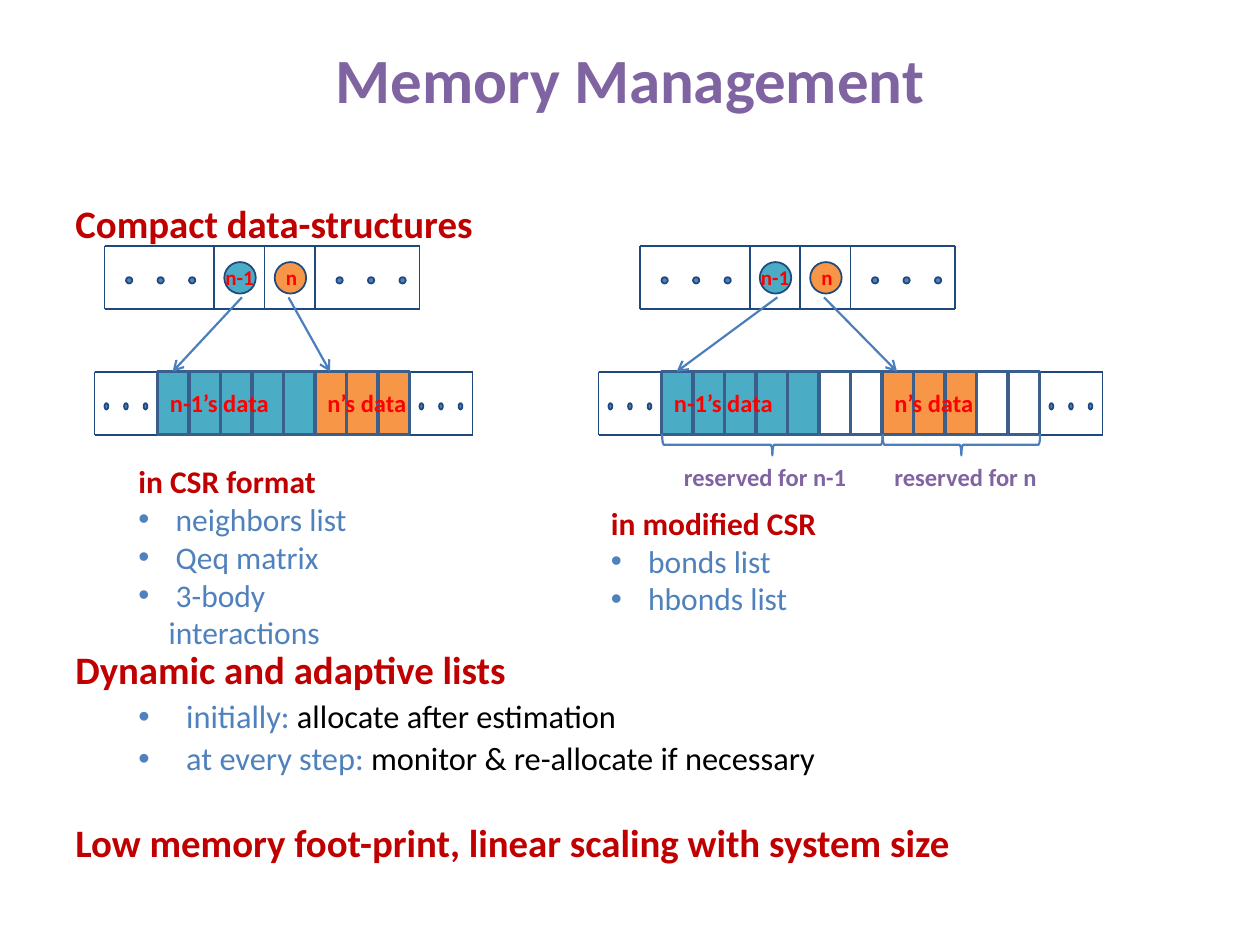
import pptx
import pptx.dml.color
import pptx.enum.shapes
import pptx.enum.text
import pptx.oxml
import pptx.oxml.ns
import pptx.util
from pptx.util import Inches

COLORS = {
    "purple": "8064A2", "heading": "C00000", "blue": "4F81BD", "black": "000000",
    "label": "FF0000", "navy": "1F497D", "arrow": "4B7EBC", "cell_line": "3A5F8C",
    "teal": "4BACC6", "orange": "F79646", "white": "FFFFFF",
}
FONT = "Calibri"
SHAPES = pptx.enum.shapes.MSO_SHAPE
ANCHORS = pptx.enum.text.MSO_ANCHOR

TITLE = "Memory Management"
HEADING = {"size": 22.2, "bold": True, "line_spacing": 0.9, "indent": (0.38, -0.38)}
DETAIL = {"size": 18.5, "line_spacing": 0.9, "indent": (0.88, -0.38),
          "bullet": True, "space_before": 4}
BODY = [
    ([("Compact data-structures", "heading")], HEADING),
    ([("Dynamic and adaptive lists", "heading")], HEADING | {"space_before": 231}),
    ([("initially: ", "blue"), ("allocate after estimation", "black")], DETAIL),
    ([("at every step: ", "blue"), ("monitor & re-allocate if necessary", "black")], DETAIL),
    ([("Low memory foot-print, linear scaling with system size", "heading")],
     HEADING | {"space_before": 26.5}),
]
PANELS = [
    {"index_left": 0.83, "data_left": 0.75, "used": (5, 3), "spare": (0, 0),
     "list_box": (1, 3.62, 2.33, 1.33), "heading": "in CSR format",
     "items": ["neighbors list", "Qeq matrix", "3-body interactions"]},
    {"index_left": 5.08, "data_left": 4.75, "used": (5, 3), "spare": (2, 2),
     "list_box": (4.75, 3.95, 2.33, 1), "heading": "in modified CSR",
     "items": ["bonds list", "hbonds list"]},
]
# name, fill, and offsets in the index row: circle, label, label width, arrow start
ATOMS = [("n-1", "teal", 0.95, 0.86, 0.45, 1.09), ("n", "orange", 1.35, 1.34, 0.25, 1.46)]
DATA_LABEL_WIDTHS = (1.08, 0.83)
RESERVED_LABELS = [(0.08, 1.5), (0, 1.33)]
INDEX_TOP, DATA_TOP, ROW_HEIGHT = 1.95, 2.95, 0.5
CELL_WIDTH, END_WIDTH = 0.25, 0.5


def rgb(color):
    return pptx.dml.color.RGBColor.from_string(COLORS[color])


def add_paragraph(frame, runs, size=18, bold=False, align=None, line_spacing=None,
                  space_before=None, indent=None, bullet=False):
    """Write (text, color) runs into the first free paragraph of the frame."""
    paragraph = frame.paragraphs[0]
    if paragraph.runs:
        paragraph = frame.add_paragraph()
    properties = paragraph._p.get_or_add_pPr()
    if indent:
        properties.set("marL", str(Inches(indent[0])))
        properties.set("indent", str(Inches(indent[1])))
    if bullet:
        for element in ('a:buFont %s typeface="Arial"', 'a:buChar %s char="•"'):
            namespace = pptx.oxml.ns.nsdecls("a")
            properties.append(pptx.oxml.parse_xml(f"<{element % namespace}/>"))
    paragraph.alignment = align
    paragraph.line_spacing = line_spacing
    if space_before:
        paragraph.space_before = pptx.util.Pt(space_before)
    for text, color in runs:
        run = paragraph.add_run()
        run.text = text
        run.font.name, run.font.size, run.font.bold = FONT, pptx.util.Pt(size), bold
        run.font.color.rgb = rgb(color)


def add_text_box(shapes, box, wrap=True):
    frame = shapes.add_textbox(*map(Inches, box)).text_frame
    frame.word_wrap = wrap
    return frame


def add_label(shapes, text, box, size, color):
    add_paragraph(add_text_box(shapes, box, wrap=False), [(text, color)], size, bold=True)


def add_shape(shapes, kind, box, fill, line="navy", width=1):
    shape = shapes.add_shape(kind, *map(Inches, box))
    shape.shadow.inherit = False
    if fill:
        shape.fill.solid()
        shape.fill.fore_color.rgb = rgb(fill)
    else:
        shape.fill.background()
    shape.line.color.rgb = rgb(line)
    shape.line.width = pptx.util.Pt(width)
    return shape


def add_line(shapes, start, end, color="navy", width=1, arrow=False):
    line = shapes.add_connector(pptx.enum.shapes.MSO_CONNECTOR.STRAIGHT,
                                *map(Inches, (*start, *end)))
    line.line.color.rgb = rgb(color)
    line.line.width = pptx.util.Pt(width)
    namespace = pptx.oxml.ns.nsdecls("a")
    if arrow:
        line.line._get_or_add_ln().append(
            pptx.oxml.parse_xml(f'<a:tailEnd {namespace} type="arrow"/>'))
    line._element.spPr.append(pptx.oxml.parse_xml(f"<a:effectLst {namespace}/>"))


def add_row(shapes, left, top, edges):
    """Draw the row outline with a vertical line at each offset in edges."""
    bottom = top + ROW_HEIGHT
    for y in (top, bottom):
        add_line(shapes, (left, y), (left + edges[-1], y))
    for x in edges:
        add_line(shapes, (left + x, top), (left + x, bottom))


def add_dots(shapes, left, top, step, width):
    for position in range(3):
        add_shape(shapes, SHAPES.OVAL, (left + position * step, top + 0.25, width, 0.05), "blue")


def add_index_row(shapes, left):
    add_row(shapes, left, INDEX_TOP, (0, 0.87, 1.27, 1.67, 2.5))
    for offset in (0.17, 1.84):
        add_dots(shapes, left + offset, INDEX_TOP, 0.25, 0.05)
    for name, fill, circle, label, label_width, _ in ATOMS:
        add_shape(shapes, SHAPES.OVAL, (left + circle, 2.08, 0.25, 0.25), fill)
        add_label(shapes, name, (left + label, 2.05, label_width, 0.3), 12, "label")


def add_data_row(shapes, panel):
    left = panel["data_left"]
    cell_count = sum(panel["used"]) + sum(panel["spare"])
    right_end = END_WIDTH + cell_count * CELL_WIDTH
    add_row(shapes, left, DATA_TOP, (0, END_WIDTH, right_end + END_WIDTH))
    for offset in (0, right_end):
        add_dots(shapes, left + offset + 0.08, DATA_TOP, 0.155, 0.03)

    block_left = left + END_WIDTH
    for atom, used, spare, label_width, reserved in zip(
            ATOMS, panel["used"], panel["spare"], DATA_LABEL_WIDTHS, RESERVED_LABELS):
        name, fill, arrow_offset = atom[0], atom[1], atom[-1]
        for position, color in enumerate([fill] * used + ["white"] * spare):
            box = (block_left + position * CELL_WIDTH, DATA_TOP, CELL_WIDTH, ROW_HEIGHT)
            add_shape(shapes, SHAPES.RECTANGLE, box, color, "cell_line", 2)
        add_label(shapes, f"{name}’s data", (block_left, 3.03, label_width, 0.34), 14, "label")
        add_line(shapes, (panel["index_left"] + arrow_offset, 2.36),
                 (block_left + 0.12, DATA_TOP), "arrow", 1.25, arrow=True)
        block_width = (used + spare) * CELL_WIDTH
        if spare:
            brace_box = (block_left + block_width / 2 - 0.08, 3.53 - block_width / 2,
                         0.17, block_width)
            brace = add_shape(shapes, SHAPES.LEFT_BRACE, brace_box, None, "arrow", 1.25)
            brace.rotation = 270
            offset, width = reserved
            add_label(shapes, f"reserved for {name}",
                      (block_left + offset, 3.62, width, 0.34), 14, "purple")
        block_left += block_width


def add_panel(slide, panel):
    shapes = slide.shapes.add_group_shape().shapes
    add_index_row(shapes, panel["index_left"])
    add_data_row(shapes, panel)
    frame = add_text_box(shapes, panel["list_box"])
    add_paragraph(frame, [(panel["heading"], "heading")], bold=True)
    for item in panel["items"]:
        add_paragraph(frame, [(f" {item}", "blue")], indent=(0.24, -0.24), bullet=True)


def main():
    presentation = pptx.Presentation()
    presentation.slide_width, presentation.slide_height = Inches(10), Inches(7.5)
    slide = presentation.slides.add_slide(presentation.slide_layouts[5])

    title = slide.shapes.title
    title.left, title.top, title.width, title.height = map(Inches, (0, 0, 10, 1.25))
    title.text_frame.vertical_anchor = ANCHORS.MIDDLE
    add_paragraph(title.text_frame, [(TITLE, "purple")], 36, bold=True,
                  align=pptx.enum.text.PP_ALIGN.CENTER)

    body = add_text_box(slide.shapes, (0.5, 1.25, 9, 6))
    body.vertical_anchor = ANCHORS.MIDDLE
    for runs, style in BODY:
        add_paragraph(body, runs, **style)

    for panel in PANELS:
        add_panel(slide, panel)
    presentation.save("out.pptx")


if __name__ == "__main__":
    main()
